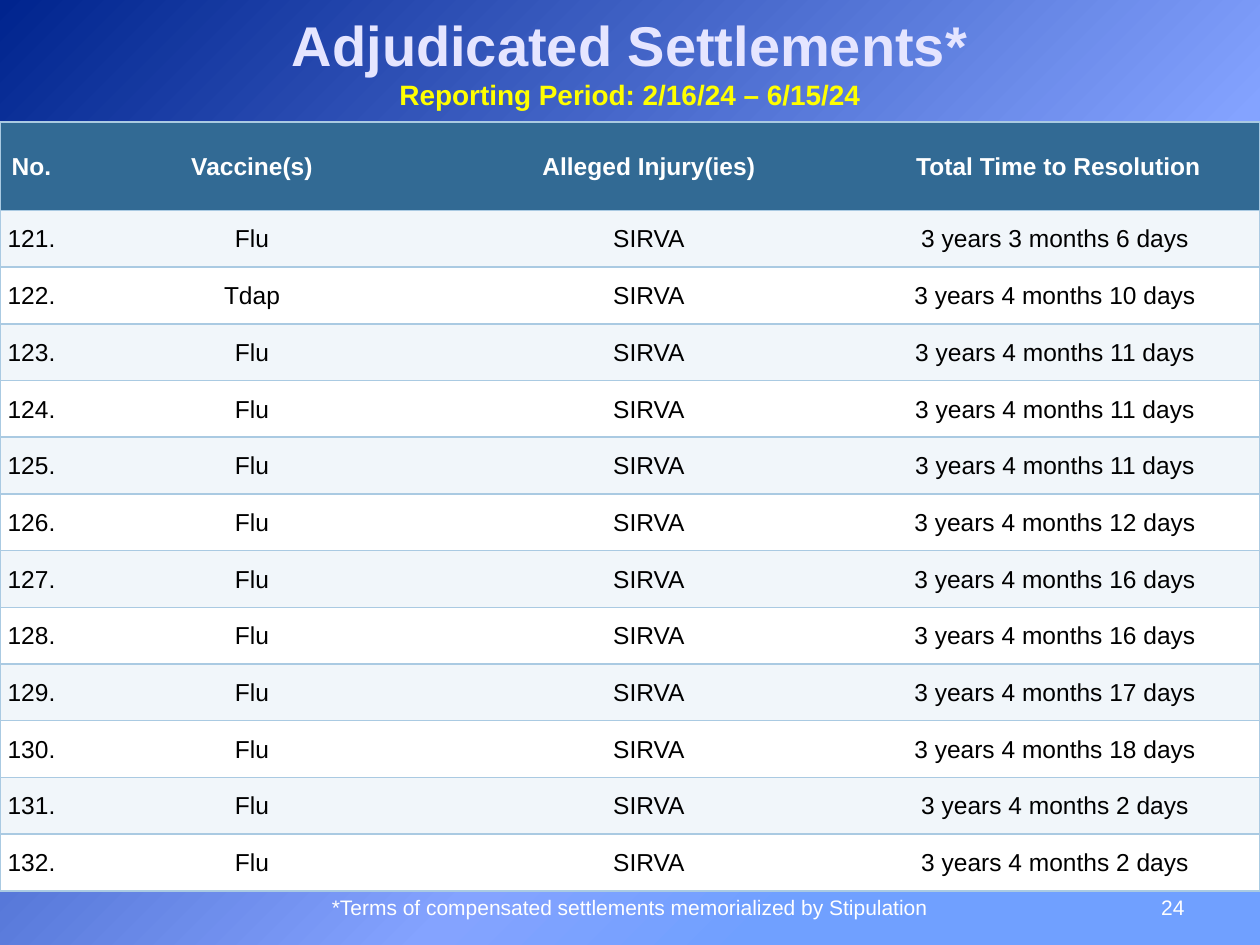
from dataclasses import dataclass

from lxml import etree
from pptx import Presentation
from pptx import util as u
from pptx.dml.color import RGBColor
from pptx.enum import text
from pptx.oxml import ns

COLUMNS, ROWS = 20, 15  # page grid
NO_STYLE = "{2D5ABB26-0587-4C30-8999-92F81FD0307C}"


@dataclass(frozen=True)
class Theme:
    font: str = "Arial"
    title: str = "E5E5FF"
    period: str = "FFFF00"
    light: str = "FFFFFF"
    dark: str = "000000"
    header: str = "326A94"
    bands: tuple = ("F1F6FA", "FFFFFF")
    border: str = "AACAE2"
    backdrop: tuple = ((0, "00248E"), (62, "84A3FF"), (77, "70A0FF"))
    title_size: int = 32
    period_size: int = 16
    table_size: int = 14
    note_size: int = 12


def add_xml(parent, tag, **attributes):
    return etree.SubElement(parent, ns.qn(tag), attributes)


class SlideBuilder:
    def __init__(self, deck, theme):
        self.theme = theme
        self.page = deck.slides.add_slide(deck.slide_layouts[6])
        self.column = deck.slide_width / COLUMNS
        self.row = deck.slide_height / ROWS

    def across(self, columns):
        return u.Emu(round(columns * self.column))

    def down(self, rows):
        return u.Emu(round(rows * self.row))

    def backdrop(self):
        """Radial gradient spreading from the top left corner."""
        self.page.background.fill.gradient()
        gradient = self.page.element.find(".//" + ns.qn("a:gradFill"))
        for child in list(gradient):
            gradient.remove(child)
        stops = add_xml(gradient, "a:gsLst")
        for percent, color in self.theme.backdrop:
            stop = add_xml(stops, "a:gs", pos=str(percent * 1000))
            add_xml(stop, "a:srgbClr", val=color)
        circle = add_xml(gradient, "a:path", path="circle")
        add_xml(circle, "a:fillToRect", r="100000", b="100000")

    def span(self, para, words, color, size, bold=False):
        span = para.add_run()
        span.text = words
        style = {"name": self.theme.font, "size": u.Pt(size), "bold": bold}
        for name, value in style.items():
            setattr(span.font, name, value)
        span.font.color.rgb = RGBColor.from_string(color)

    def text_box(self, place, lines, align, anchor, **insets):
        """Lines are (words, color, size, bold) in one paragraph."""
        left, top, width, height = place
        box = self.page.shapes.add_textbox(
            self.across(left), self.down(top), self.across(width), self.down(height))
        frame = {"word_wrap": True, "vertical_anchor": anchor, **insets}
        for name, value in frame.items():
            setattr(box.text_frame, name, value)
        para = box.text_frame.paragraphs[0]
        para.alignment = align
        for index, line in enumerate(lines):
            if index:
                para.add_line_break()
            self.span(para, *line)

    def cell(self, cell, words, color, fill, bold, sides):
        frame = {"vertical_anchor": text.MSO_ANCHOR.MIDDLE, "margin_left": u.Inches(0.01),
                 "margin_right": u.Inches(0.01), "margin_top": u.Inches(0.01),
                 "margin_bottom": 0}
        for name, value in frame.items():
            setattr(cell, name, value)
        para = cell.text_frame.paragraphs[0]
        para.alignment = text.PP_ALIGN.CENTER
        self.span(para, words, color, self.theme.table_size, bold)
        # Borders go before the fill in the cell properties
        properties = cell._tc.get_or_add_tcPr()
        for side in sides:
            line = add_xml(properties, "a:ln" + side, w=str(u.Pt(1)))
            add_xml(add_xml(line, "a:solidFill"), "a:srgbClr", val=self.theme.border)
        cell.fill.solid()
        cell.fill.fore_color.rgb = RGBColor.from_string(fill)

    def table(self, left, top, widths, heights, records):
        table = self.page.shapes.add_table(
            len(heights), len(widths), self.across(left), self.down(top),
            self.across(sum(widths)), self.down(sum(heights))).table
        table._tbl.tblPr.find(ns.qn("a:tableStyleId")).text = NO_STYLE
        for column, width in zip(table.columns, widths):
            column.width = self.across(width)
        for row, height in zip(table.rows, heights):
            row.height = self.down(height)
        last = len(widths) - 1
        for r, record in enumerate(records):
            header = r == 0
            color = self.theme.light if header else self.theme.dark
            fill = self.theme.header if header else self.theme.bands[(r - 1) % 2]
            for c, words in enumerate(record):
                sides = {0: "LTB", last: "RTB"}.get(c, "TB")
                self.cell(table.cell(r, c), words, color, fill, header, sides)


HEADINGS = ("No.", "Vaccine(s)", "Alleged Injury(ies)", "Total Time to Resolution")
FIRST_CASE = 121
TIMES = ((3, 6), (4, 10), (4, 11), (4, 11), (4, 11), (4, 12),
         (4, 16), (4, 16), (4, 17), (4, 18), (4, 2), (4, 2))  # months, days past 3 years
OTHER_VACCINES = {122: "Tdap"}


def main():
    deck = Presentation()
    deck.slide_width, deck.slide_height = u.Inches(10), u.Inches(7.5)
    theme = Theme()
    slide = SlideBuilder(deck, theme)
    slide.backdrop()

    # Title and reporting period
    slide.text_box(
        (0, 0, 20, 1.8),
        [("Adjudicated Settlements*", theme.title, theme.title_size, True),
         ("Reporting Period: 2/16/24 – 6/15/24", theme.period, theme.period_size, True)],
        text.PP_ALIGN.CENTER, text.MSO_ANCHOR.MIDDLE,
        margin_top=u.Inches(0.06), margin_bottom=0)

    # Page number and footnote
    for place, words, align in (
            ((14.34, 13.66, 4.66, 1.04), "24", text.PP_ALIGN.RIGHT),
            ((5, 14, 10, 0.7), "*Terms of compensated settlements memorialized by Stipulation",
             text.PP_ALIGN.CENTER)):
        slide.text_box(place, [(words, theme.light, theme.note_size)],
                       align, text.MSO_ANCHOR.BOTTOM)

    # Settlements table
    cases = [(f"{number}.", OTHER_VACCINES.get(number, "Flu"), "SIRVA",
              f"3 years {months} months {days} days ")
             for number, (months, days) in enumerate(TIMES, FIRST_CASE)]
    slide.table(0, 1.94, (1, 6, 6.6, 6.4), [1.4] + [0.9] * len(cases), [HEADINGS, *cases])

    deck.save("out.pptx")


if __name__ == "__main__":
    main()
